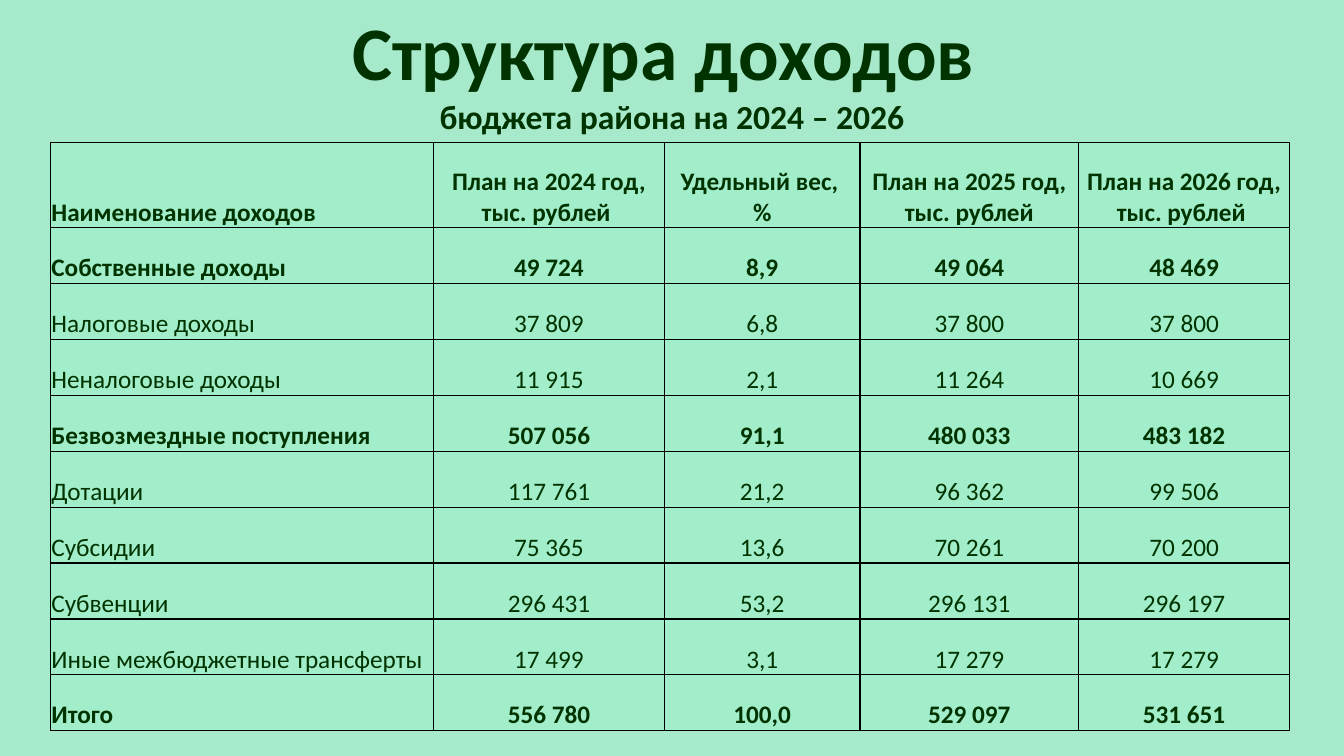
from dataclasses import dataclass

import lxml.etree
import pptx
import pptx.dml.color
import pptx.enum.shapes
import pptx.enum.text
import pptx.oxml.ns
import pptx.presentation
import pptx.slide
import pptx.table
import pptx.text.text
import pptx.util

Inches = pptx.util.Inches
RGBColor = pptx.dml.color.RGBColor
Alignment = pptx.enum.text.PP_ALIGN
Anchor = pptx.enum.text.MSO_ANCHOR


@dataclass(frozen=True)
class Theme:
    font: str = "Calibri"
    text: str = "003300"
    background: str = "A7EACB"
    cell: str = "A2EDCA"
    border: str = "000000"
    border_width: float = 1
    title_size: int = 54
    subtitle_size: int = 24
    table_size: int = 18


@dataclass(frozen=True)
class IncomeRow:
    name: str
    plan_2024: str
    share: str
    plan_2025: str
    plan_2026: str
    bold: bool = False

    def texts(self) -> list[str]:
        return [self.name, self.plan_2024, self.share, self.plan_2025, self.plan_2026]


THEME = Theme()
SLIDE_WIDTH, SLIDE_HEIGHT = 13.33, 7.5
TABLE_LEFT, TABLE_TOP, TABLE_BOTTOM = 0.5, 1.41, 7.25
HEADER_HEIGHT = 0.85
COLUMN_WIDTHS = [3.8, 2.29, 1.94, 2.17, 2.09]
INCOME_ROWS = [
    IncomeRow("Наименование доходов", "План на 2024 год, тыс. рублей ", "Удельный вес, \n%",
              "План на 2025 год, тыс. рублей", "План на 2026 год, тыс. рублей ", True),
    IncomeRow("Собственные доходы", "49 724", "8,9", "49 064", "48 469", True),
    IncomeRow("Налоговые доходы", "37 809", "6,8", "37 800", "37 800"),
    IncomeRow("Неналоговые доходы", "11 915", "2,1", "11 264", "10 669"),
    IncomeRow("Безвозмездные поступления", "507 056", "91,1", "480 033", "483 182", True),
    IncomeRow("Дотации", "117 761", "21,2", "96 362", "99 506"),
    IncomeRow("Субсидии", "75 365", "13,6", "70 261", "70 200"),
    IncomeRow("Субвенции", "296 431", "53,2", "296 131", "296 197"),
    IncomeRow("Иные межбюджетные трансферты", "17 499", "3,1", "17 279", "17 279"),
    IncomeRow("Итого", "556 780", "100,0", "529 097", "531 651", True),
]


def format_paragraph(paragraph: pptx.text.text._Paragraph, size: int, bold: bool,
                     alignment: Alignment) -> None:
    paragraph.alignment = alignment
    for run in paragraph.runs:
        run.font.name = THEME.font
        run.font.size = pptx.util.Pt(size)
        run.font.bold = bold
        run.font.color.rgb = RGBColor.from_string(THEME.text)


def draw_background(slide: pptx.slide.Slide) -> None:
    shape = slide.shapes.add_shape(pptx.enum.shapes.MSO_SHAPE.RECTANGLE, 0, 0,
                                   Inches(SLIDE_WIDTH), Inches(SLIDE_HEIGHT))
    shape.shadow.inherit = False
    shape.fill.solid()
    shape.fill.fore_color.rgb = RGBColor.from_string(THEME.background)
    shape.line.fill.background()
    slide.shapes.title._element.addprevious(shape._element)


def draw_title(slide: pptx.slide.Slide) -> None:
    title = slide.shapes.title
    title.left, title.top = 0, 0
    title.width, title.height = Inches(SLIDE_WIDTH), Inches(TABLE_TOP)
    frame = title.text_frame
    frame.text = "Структура доходов \nбюджета района на 2024 – 2026"
    frame.auto_size = pptx.enum.text.MSO_AUTO_SIZE.NONE
    frame.vertical_anchor = Anchor.TOP
    for paragraph, size in zip(frame.paragraphs, (THEME.title_size, THEME.subtitle_size)):
        format_paragraph(paragraph, size, True, Alignment.CENTER)


def add_borders(cell: pptx.table._Cell) -> None:
    qn = pptx.oxml.ns.qn
    properties = cell._tc.get_or_add_tcPr()
    for side in ("a:lnL", "a:lnR", "a:lnT", "a:lnB"):
        line = lxml.etree.SubElement(properties, qn(side),
                                     w=str(pptx.util.Pt(THEME.border_width)))
        fill = lxml.etree.SubElement(line, qn("a:solidFill"))
        lxml.etree.SubElement(fill, qn("a:srgbClr"), val=THEME.border)


def fill_cell(cell: pptx.table._Cell, text: str, bold: bool, alignment: Alignment) -> None:
    cell.text_frame.text = text
    cell.vertical_anchor = Anchor.BOTTOM
    cell.margin_left = cell.margin_right = cell.margin_top = Inches(0.01)
    cell.margin_bottom = 0
    add_borders(cell)
    cell.fill.solid()
    cell.fill.fore_color.rgb = RGBColor.from_string(THEME.cell)
    for paragraph in cell.text_frame.paragraphs:
        format_paragraph(paragraph, THEME.table_size, bold, alignment)


def draw_table(slide: pptx.slide.Slide) -> None:
    table = slide.shapes.add_table(
        len(INCOME_ROWS), len(COLUMN_WIDTHS), Inches(TABLE_LEFT), Inches(TABLE_TOP),
        Inches(sum(COLUMN_WIDTHS)), Inches(TABLE_BOTTOM - TABLE_TOP)).table
    table.first_row = table.horz_banding = False
    for column, width in zip(table.columns, COLUMN_WIDTHS):
        column.width = Inches(width)
    body_height = (TABLE_BOTTOM - TABLE_TOP - HEADER_HEIGHT) / (len(INCOME_ROWS) - 1)
    for row_index, (row, income) in enumerate(zip(table.rows, INCOME_ROWS)):
        row.height = Inches(body_height if row_index else HEADER_HEIGHT)
        for column_index, (cell, text) in enumerate(zip(row.cells, income.texts())):
            alignment = Alignment.CENTER if column_index else Alignment.LEFT
            fill_cell(cell, text, income.bold, alignment)


def main() -> None:
    presentation = pptx.Presentation()
    presentation.slide_width = Inches(SLIDE_WIDTH)
    presentation.slide_height = Inches(SLIDE_HEIGHT)
    slide = presentation.slides.add_slide(presentation.slide_layouts.get_by_name("Title Only"))
    draw_background(slide)
    draw_title(slide)
    draw_table(slide)
    presentation.save("out.pptx")


if __name__ == "__main__":
    main()
